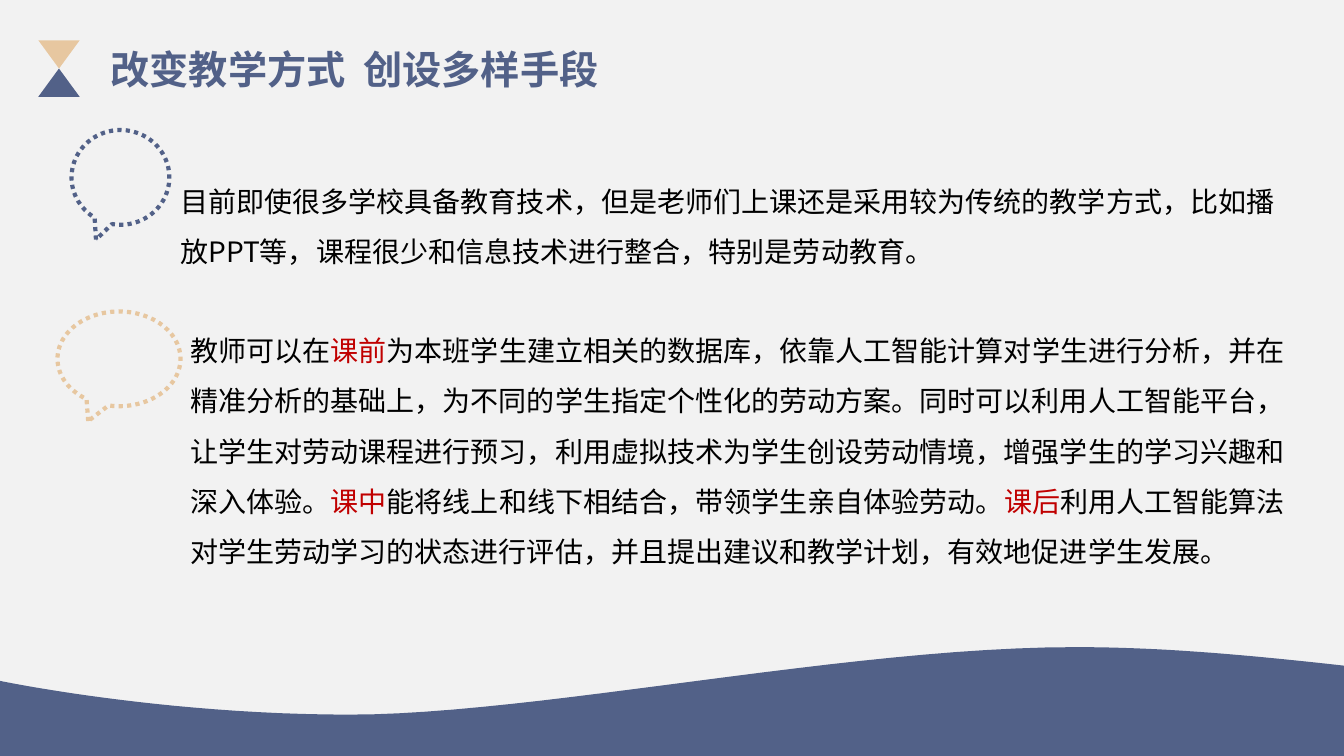
from lxml import etree
from pptx import Presentation
from pptx.dml.color import RGBColor
from pptx.enum.dml import MSO_LINE
from pptx.enum.shapes import MSO_SHAPE
from pptx.oxml.ns import qn
from pptx.util import Inches, Pt

TRIANGLE = MSO_SHAPE.ISOSCELES_TRIANGLE
CALLOUT = MSO_SHAPE.OVAL_CALLOUT
DOTTED = MSO_LINE.ROUND_DOT  # written to the file as sysDot

BLUE = RGBColor(0x52, 0x61, 0x88)
SAND = RGBColor(0xE7, 0xC7, 0xA0)
RED = RGBColor(0xC0, 0x00, 0x00)
BLACK = RGBColor(0x00, 0x00, 0x00)
PALE = RGBColor(0xF2, 0xF2, 0xF2)
FONT = "Noto Sans CJK SC"

WIDTH, HEIGHT = 13.33, 7.5
CURVE_STEPS = 24

# Top edge of the wave as shares of its box: two controls and an end per curve
WAVE_START = (0, 0.31)
WAVE_CURVES = [
    ((0, 0.31), (0.12, 0.62), (0.26, 0.62)),
    ((0.4, 0.62), (0.63, 0), (0.8, 0)),
    ((0.86, 0), (0.92, 0.06), (1, 0.17)),
]

TITLE = "改变教学方式  创设多样手段"
PROBLEM = [
    ("目前即使很多学校具备教育技术，但是老师们上课还是采用较为传统的教学方式，"
     "比如播放PPT等，课程很少和信息技术进行整合，特别是劳动教育。", BLACK),
]
SOLUTION = [
    ("教师可以在", BLACK),
    ("课前", RED),
    ("为本班学生建立相关的数据库，依靠人工智能计算对学生进行分析，并在精准分析的基础上，"
     "为不同的学生指定个性化的劳动方案。同时可以利用人工智能平台，让学生对劳动课程进行预习，"
     "利用虚拟技术为学生创设劳动情境，增强学生的学习兴趣和深入体验。", BLACK),
    ("课中", RED),
    ("能将线上和线下相结合，带领学生亲自体验劳动。", BLACK),
    ("课后", RED),
    ("利用人工智能算法对学生劳动学习的状态进行评估，并且提出建议和教学计划，"
     "有效地促进学生发展。", BLACK),
]


def bezier(start, control_1, control_2, end):
    """Return points along a cubic curve, without its start."""
    points = []
    for step in range(1, CURVE_STEPS + 1):
        t = step / CURVE_STEPS
        weights = ((1 - t) ** 3, 3 * t * (1 - t) ** 2, 3 * t * t * (1 - t), t ** 3)
        corners = (start, control_1, control_2, end)
        points.append(tuple(sum(w * c[axis] for w, c in zip(weights, corners))
                            for axis in (0, 1)))
    return points


def add_wave(slide, left, top, width, height):
    outline = [WAVE_START]
    for curve in WAVE_CURVES:
        outline += bezier(outline[-1], *curve)
    outline += [(1, 1), (0, 1)]
    points = [(Inches(left + x * width), Inches(top + y * height)) for x, y in outline]
    builder = slide.shapes.build_freeform(*points[0])
    builder.add_line_segments(points[1:], close=True)
    fill_plain(builder.convert_to_shape(), BLUE)


def fill_plain(shape, color):
    shape.fill.solid()
    shape.fill.fore_color.rgb = color
    shape.line.fill.background()
    shape.shadow.inherit = False


def add_text(slide, box, parts, size, bold=False, line_spacing=None):
    """Place one paragraph made of (text, colour) parts."""
    frame = slide.shapes.add_textbox(*map(Inches, box)).text_frame
    frame.word_wrap = True
    paragraph = frame.paragraphs[0]
    paragraph.line_spacing = line_spacing
    paragraph.font.size = Pt(size)
    paragraph.font.bold = bold
    paragraph.font.name = FONT
    for text, color in parts:
        run = paragraph.add_run()
        run.text = text
        run.font.color.rgb = color
        east_asian = etree.SubElement(run.font._element, qn("a:ea"))
        east_asian.set("typeface", FONT)


def add_header(slide, left, top, width, height):
    """Place the hourglass mark and the title beside it."""
    mark_width, half = 0.41, height / 2
    for row, (color, rotation) in enumerate([(SAND, 180), (BLUE, 0)]):
        triangle = slide.shapes.add_shape(
            TRIANGLE, Inches(left), Inches(top + row * half),
            Inches(mark_width), Inches(half))
        triangle.rotation = rotation
        fill_plain(triangle, color)
    title_left = left + 0.62
    add_text(slide, (title_left, top, width - 0.62, height), [(TITLE, BLUE)], 28, bold=True)


def add_point(slide, bubble_box, text_box, color, parts):
    """Place a dotted speech bubble and the text that goes with it."""
    bubble = slide.shapes.add_shape(CALLOUT, *map(Inches, bubble_box))
    bubble.adjustments[0] = -0.25
    bubble.adjustments[1] = 0.657
    bubble.fill.background()
    bubble.line.color.rgb = color
    bubble.line.width = Pt(3)
    bubble.line.dash_style = DOTTED
    bubble.shadow.inherit = False
    add_text(slide, text_box, parts, 20, line_spacing=1.5)


def main():
    presentation = Presentation()
    presentation.slide_width = Inches(WIDTH)
    presentation.slide_height = Inches(HEIGHT)
    slide = presentation.slides.add_slide(presentation.slide_layouts[6])
    slide.background.fill.solid()
    slide.background.fill.fore_color.rgb = PALE

    wave_top = 6.42
    add_wave(slide, 0, wave_top, WIDTH, HEIGHT - wave_top)
    add_header(slide, 0.38, 0.4, 7.29, 0.56)
    add_point(slide, (0.71, 1.29, 0.97, 0.94), (1.69, 1.61, 11.09, 1.11), BLUE, PROBLEM)
    add_point(slide, (0.57, 3.09, 1.22, 0.94), (1.79, 3.09, 11.26, 2.62), SAND, SOLUTION)
    presentation.save("out.pptx")


if __name__ == "__main__":
    main()
